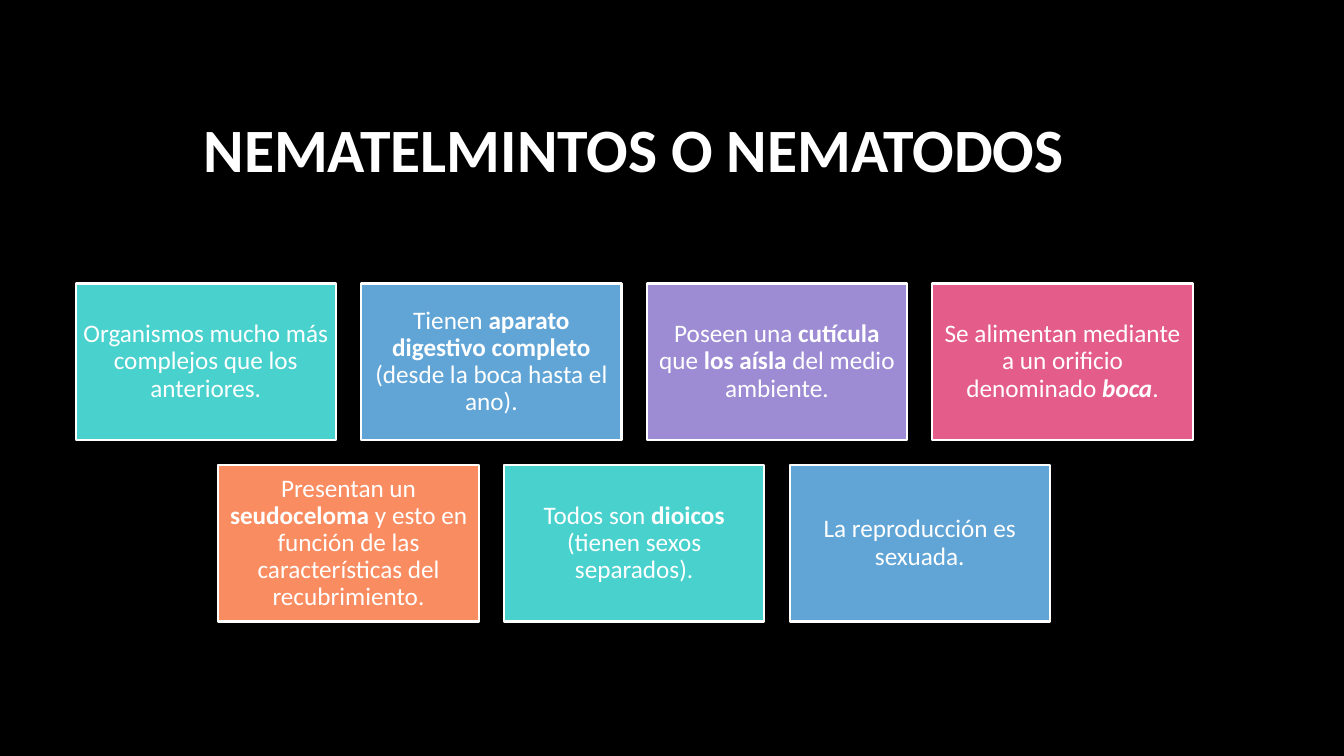
from dataclasses import dataclass
from pptx import Presentation
from pptx.dml.color import RGBColor as Rgb
from pptx.enum.shapes import MSO_SHAPE as Shape
from pptx.enum.text import MSO_ANCHOR as Anchor, PP_ALIGN as Align
from pptx.util import Pt

SCALE = 9525


@dataclass(frozen=True)
class Theme:
    back: str = "000000"
    ink: str = "FFFFFF"
    fills: tuple = ("49D1CD", "61A5D6", "9D8CD3", "E45C8A", "F98C61")
    face: str = "Calibri"
    head: int = 44
    body: int = 18
    rule: float = 1.5


THEME = Theme()
PLAIN, BOLD, SLANT = (False, False), (True, False), (True, True)

TITLE = "NEMATELMINTOS O NEMATODOS"
FACTS = [
    [("Organismos mucho más complejos que los anteriores.", PLAIN)],
    [("Tienen ", PLAIN), ("aparato digestivo completo", BOLD),
     (" (desde la boca hasta el ano).", PLAIN)],
    [("Poseen una ", PLAIN), ("cutícula ", BOLD), ("que ", PLAIN),
     ("los aísla ", BOLD), ("del medio ambiente.", PLAIN)],
    [("Se alimentan mediante a un orificio denominado ", PLAIN),
     ("boca", SLANT), (".", PLAIN)],
    [("Presentan un ", PLAIN), ("seudoceloma ", BOLD),
     ("y esto en función de las características del recubrimiento.", PLAIN)],
    [("Todos son ", PLAIN), ("dioicos", BOLD),
     (" (tienen sexos separados).", PLAIN)],
    [("La reproducción es sexuada.", PLAIN)],
]


def px(*vals):
    return [val * SCALE for val in vals]


def style(para, size):
    para.alignment = Align.CENTER
    para.font.name = THEME.face
    para.font.size = Pt(size)
    para.font.color.rgb = Rgb.from_string(THEME.ink)


def add_title(slide, box):
    title = slide.shapes.title
    title.left, title.top, title.width, title.height = px(*box)
    frame = title.text_frame
    frame.text = TITLE
    frame.word_wrap = True
    frame.vertical_anchor = Anchor.MIDDLE
    para = frame.paragraphs[0]
    style(para, THEME.head)
    para.font.bold = True


def add_card(slide, box, fill, parts):
    card = slide.shapes.add_shape(Shape.RECTANGLE, *px(*box))
    card.shadow.inherit = False
    card.fill.solid()
    card.fill.fore_color.rgb = Rgb.from_string(fill)
    card.line.color.rgb = Rgb.from_string(THEME.ink)
    card.line.width = Pt(THEME.rule)
    frame = card.text_frame
    frame.word_wrap = True
    frame.vertical_anchor = Anchor.MIDDLE
    frame.margin_left = frame.margin_right = px(7)[0]
    frame.margin_top = frame.margin_bottom = px(7)[0]
    para = frame.paragraphs[0]
    style(para, THEME.body)
    para.line_spacing = 0.9
    for text, (bold, slant) in parts:
        run = para.add_run()
        run.text = text
        run.font.bold = bold
        run.font.italic = slant


def add_grid(slide, box, cols=4, gap=24):
    left, top, width, height = box
    rows = -(-len(FACTS) // cols)
    wide = (width - gap * (cols - 1)) // cols
    high = (height - gap * (rows - 1)) // rows
    for num, parts in enumerate(FACTS):
        row, col = divmod(num, cols)
        count = min(cols, len(FACTS) - row * cols)
        inset = (cols - count) * (wide + gap) // 2
        spot = (left + inset + col * (wide + gap),
                top + row * (high + gap), wide, high)
        add_card(slide, spot, THEME.fills[num % len(THEME.fills)], parts)


def main():
    deck = Presentation()
    deck.slide_width, deck.slide_height = px(1280, 720)
    slide = deck.slides.add_slide(deck.slide_layouts[5])
    slide.background.fill.solid()
    slide.background.fill.fore_color.rgb = Rgb.from_string(THEME.back)
    add_title(slide, (72, 64, 1064, 153))
    add_grid(slide, (72, 270, 1064, 322))
    deck.save("out.pptx")


if __name__ == "__main__":
    main()
